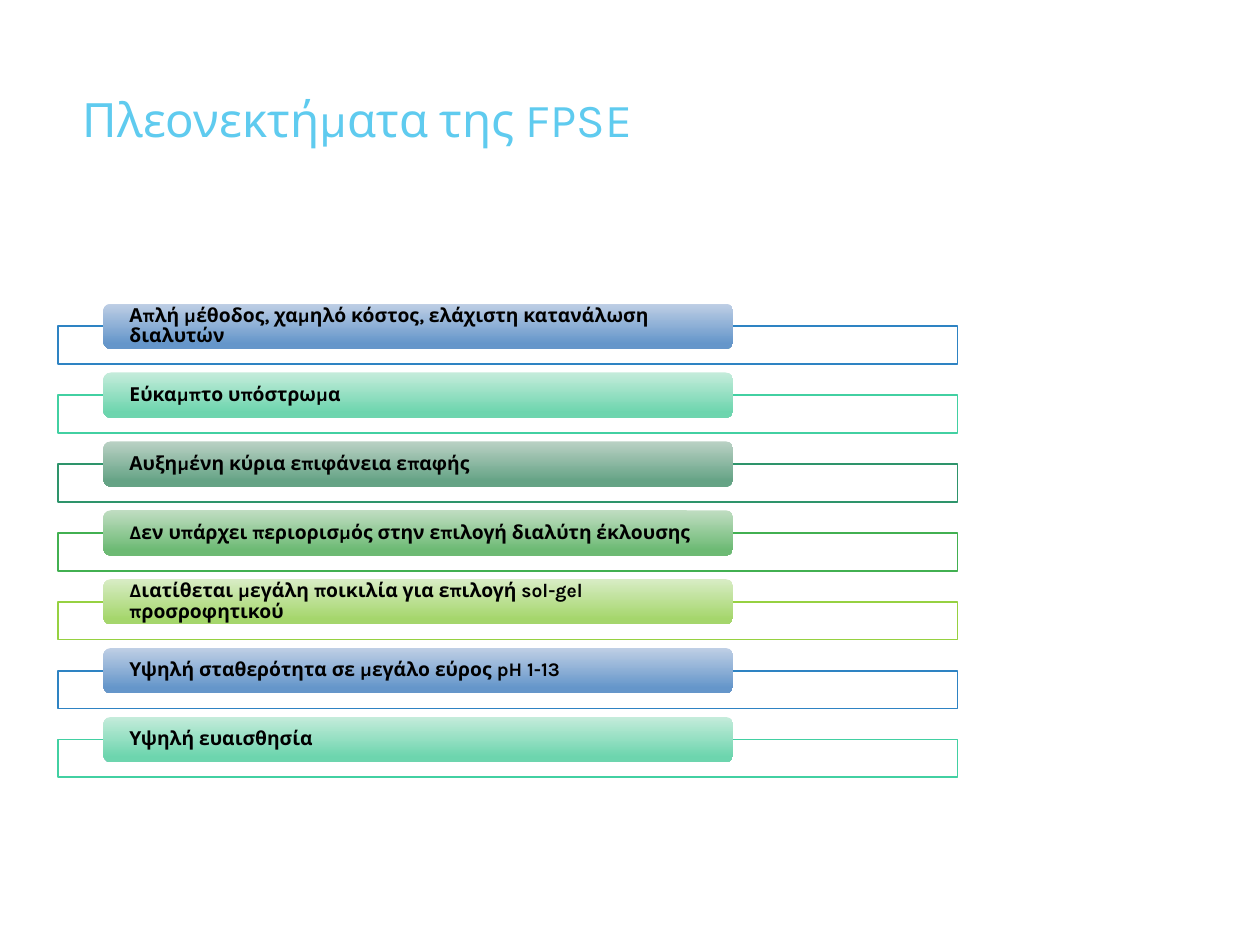
import pptx
import pptx.dml.color
import pptx.enum.shapes
import pptx.enum.text
import pptx.oxml
import pptx.oxml.ns
import pptx.util

RGBColor = pptx.dml.color.RGBColor
Inches = pptx.util.Inches
Pt = pptx.util.Pt
MSO_SHAPE = pptx.enum.shapes.MSO_SHAPE
MSO_ANCHOR = pptx.enum.text.MSO_ANCHOR
PP_ALIGN = pptx.enum.text.PP_ALIGN

FONT = "Karla"
WHITE = RGBColor(0xFF, 0xFF, 0xFF)
BLACK = RGBColor(0x00, 0x00, 0x00)
SKY = RGBColor(0x5F, 0xCB, 0xEF)
BLUE = RGBColor(0x2E, 0x83, 0xC3)
BLUE_LIGHT = RGBColor(0xBF, 0xCF, 0xE5)
BLUE_MID = RGBColor(0x65, 0x96, 0xCA)
MINT = RGBColor(0x42, 0xD0, 0xA2)
MINT_LIGHT = RGBColor(0xC5, 0xEC, 0xDB)
MINT_MID = RGBColor(0x6D, 0xD5, 0xAE)
PINE = RGBColor(0x2E, 0x94, 0x6B)
PINE_LIGHT = RGBColor(0xBA, 0xD1, 0xC4)
PINE_MID = RGBColor(0x65, 0xA3, 0x85)
GREEN = RGBColor(0x42, 0xB0, 0x51)
GREEN_LIGHT = RGBColor(0xC0, 0xDD, 0xC2)
GREEN_MID = RGBColor(0x6D, 0xBA, 0x74)
LIME = RGBColor(0x96, 0xD1, 0x41)
LIME_LIGHT = RGBColor(0xD8, 0xEC, 0xC5)
LIME_MID = RGBColor(0xA5, 0xD6, 0x6C)

PALETTE = [
    (BLUE, BLUE_LIGHT, BLUE_MID),
    (MINT, MINT_LIGHT, MINT_MID),
    (PINE, PINE_LIGHT, PINE_MID),
    (GREEN, GREEN_LIGHT, GREEN_MID),
    (LIME, LIME_LIGHT, LIME_MID),
]
ADVANTAGES = [
    "Απλή μέθοδος, χαμηλό κόστος, ελάχιστη κατανάλωση διαλυτών",
    "Εύκαμπτο υπόστρωμα",
    "Αυξημένη κύρια επιφάνεια επαφής",
    "Δεν υπάρχει περιορισμός στην επιλογή διαλύτη έκλουσης",
    "Διατίθεται μεγάλη ποικιλία για επιλογή sol-gel προσροφητικού",
    "Υψηλή σταθερότητα σε μεγάλο εύρος pH 1-13",
    "Υψηλή ευαισθησία",
]
FIRST_ROW_TOP = 2.41
LAST_ROW_TOP = 5.69
ROW_PITCH = (LAST_ROW_TOP - FIRST_ROW_TOP) / (len(ADVANTAGES) - 1)
FRAME_DROP = 0.18


def add_run(paragraph, text, size, color, bold=False):
    run = paragraph.add_run()
    run.text = text
    run.font.name = FONT
    run.font.size = Pt(size)
    run.font.bold = bold
    run.font.color.rgb = color


def add_title(slide, text):
    box = slide.shapes.add_textbox(Inches(0.56), Inches(0.67), Inches(7.05), Inches(1.44))
    box.text_frame.word_wrap = True
    add_run(box.text_frame.paragraphs[0], text, 27, SKY)


def add_frame(slide, top, color):
    shape = slide.shapes.add_shape(
        MSO_SHAPE.RECTANGLE, Inches(0.46), Inches(top), Inches(7.14), Inches(0.3))
    shape.shadow.inherit = False
    shape.fill.solid()
    shape.fill.fore_color.rgb = WHITE
    white = shape.fill._xPr.find(".//" + pptx.oxml.ns.qn("a:srgbClr"))
    white.append(pptx.oxml.parse_xml(
        f'<a:alpha {pptx.oxml.ns.nsdecls("a")} val="90000"/>'))
    shape.line.color.rgb = color
    shape.line.width = Pt(1)


def add_label(slide, top, text, light, mid):
    shape = slide.shapes.add_shape(
        MSO_SHAPE.ROUNDED_RECTANGLE, Inches(0.82), Inches(top), Inches(5), Inches(0.36))
    shape.shadow.inherit = False
    shape.line.fill.background()
    shape.fill.gradient()
    shape.fill.gradient_angle = 270
    for stop, position, color in zip(shape.fill.gradient_stops, (0, 0.88), (light, mid)):
        stop.position = position
        stop.color.rgb = color
    frame = shape.text_frame
    frame.word_wrap = True
    frame.vertical_anchor = MSO_ANCHOR.MIDDLE
    frame.margin_left = frame.margin_right = Inches(0.19)
    frame.margin_top = frame.margin_bottom = 0
    paragraph = frame.paragraphs[0]
    paragraph.alignment = PP_ALIGN.LEFT
    paragraph.line_spacing = 0.9
    add_run(paragraph, text, 11, BLACK, bold=True)


def main():
    presentation = pptx.Presentation()
    presentation.slide_width = Inches(10)
    presentation.slide_height = Inches(7.5)
    slide = presentation.slides.add_slide(presentation.slide_layouts[6])
    add_title(slide, "Πλεονεκτήματα της FPSE")
    for row, text in enumerate(ADVANTAGES):
        outline, light, mid = PALETTE[row % len(PALETTE)]
        top = FIRST_ROW_TOP + row * ROW_PITCH
        add_frame(slide, top + FRAME_DROP, outline)
        add_label(slide, top, text, light, mid)
    presentation.save("out.pptx")


if __name__ == "__main__":
    main()
